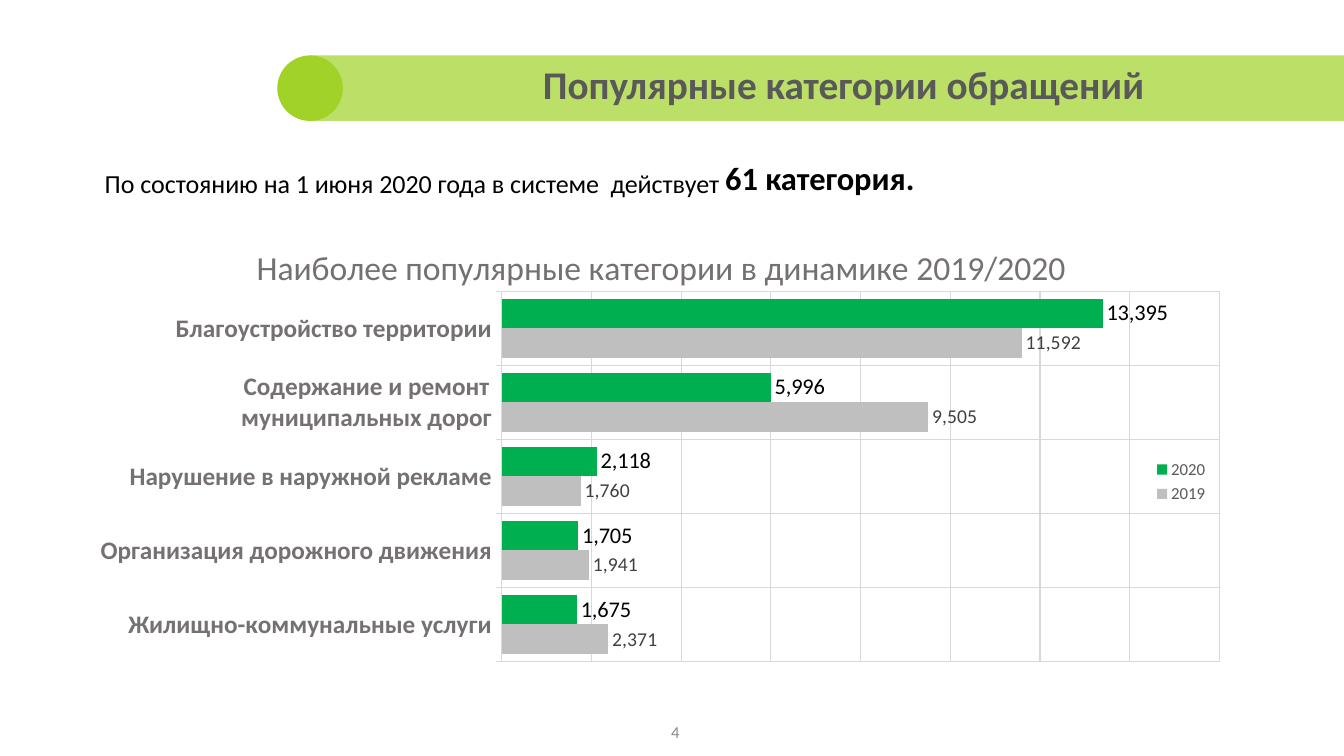
from dataclasses import dataclass

from lxml import etree
from pptx import Presentation
from pptx.chart.data import CategoryChartData
from pptx.dml.color import RGBColor
from pptx.enum.chart import XL_CHART_TYPE as ChartType
from pptx.enum.chart import XL_LABEL_POSITION as LabelPosition
from pptx.enum.chart import XL_LEGEND_POSITION as LegendPosition
from pptx.enum.chart import XL_TICK_MARK as TickMark
from pptx.enum.shapes import MSO_SHAPE as ShapeType
from pptx.enum.text import MSO_ANCHOR as Anchor
from pptx.enum.text import MSO_AUTO_SIZE as AutoSize
from pptx.enum.text import PP_ALIGN as Align
from pptx.oxml.ns import qn
from pptx.util import Inches, Pt

FONT = "Calibri"
COLORS = {
    "lime": "A0D228", "green": "00B050", "silver": "BFBFBF", "grid": "D9D9D9",
    "black": "000000", "title": "595959", "caption": "767171",
    "label": "404040", "number": "8C8C8C",
}


@dataclass
class BannerPart:
    kind: ShapeType
    left: float
    width: float
    opacity: int


@dataclass
class YearSeries:
    year: str
    values: tuple[int, ...]
    color: str
    label_size: int
    label_color: str


BANNER = (
    BannerPart(ShapeType.RECTANGLE, 3.07, 10.27, 70),
    BannerPart(ShapeType.OVAL, 2.75, 0.65, 100),
)
CATEGORIES = (
    "Жилищно-коммунальные услуги",
    "Организация дорожного движения",
    "Нарушение в наружной рекламе",
    "Содержание и ремонт муниципальных дорог",
    "Благоустройство территории",
)
YEARS = (
    YearSeries("2019", (2371, 1941, 1760, 9505, 11592), "silver", 14, "label"),
    YearSeries("2020", (1675, 1705, 2118, 5996, 13395), "green", 16, "black"),
)


def rgb(name: str) -> RGBColor:
    return RGBColor.from_string(COLORS[name])


def style_font(font, size: int, color: str, bold: bool = False) -> None:
    font.name = FONT
    font.size = Pt(size)
    font.bold = bold
    font.color.rgb = rgb(color)


def style_grid(line_format) -> None:
    line_format.color.rgb = rgb("grid")
    line_format.width = Pt(0.75)


def place(shape, left: float, top: float, width: float, height: float) -> None:
    shape.left, shape.top = Inches(left), Inches(top)
    shape.width, shape.height = Inches(width), Inches(height)


def add_banner_part(slide, part: BannerPart) -> None:
    shape = slide.shapes.add_shape(part.kind, 0, 0, 0, 0)
    place(shape, part.left, 0.55, part.width, 0.65)
    shape.shadow.inherit = False
    shape.fill.solid()
    shape.fill.fore_color.rgb = rgb("lime")
    shape.line.fill.background()
    if part.opacity < 100:
        color = shape.fill._xPr.find(".//" + qn("a:srgbClr"))
        etree.SubElement(color, qn("a:alpha"), val=str(part.opacity * 1000))


def set_layout(element, index: int, inner: bool = False, **fractions: float) -> None:
    """Give a chart part a manual position in fractions of the chart."""
    for old in element.findall(qn("c:layout")):
        element.remove(old)
    layout = etree.Element(qn("c:layout"))
    manual = etree.SubElement(layout, qn("c:manualLayout"))
    if inner:
        etree.SubElement(manual, qn("c:layoutTarget"), val="inner")
    for axis in "xy":
        etree.SubElement(manual, qn(f"c:{axis}Mode"), val="edge")
    for key, value in fractions.items():
        etree.SubElement(manual, qn(f"c:{key}"), val=str(value))
    element.insert(index, layout)


def style_series(series, year: YearSeries) -> None:
    series.format.fill.solid()
    series.format.fill.fore_color.rgb = rgb(year.color)
    labels = series.data_labels
    labels.show_value = True
    labels.number_format = "#,##0"
    labels.number_format_is_linked = False
    labels.position = LabelPosition.OUTSIDE_END
    style_font(labels.font, year.label_size, year.label_color)


def add_category_chart(slide) -> None:
    data = CategoryChartData()
    data.categories = CATEGORIES
    for year in YEARS:
        data.add_series(year.year, year.values)
    frame = slide.shapes.add_chart(
        ChartType.BAR_CLUSTERED, Inches(0.92), Inches(2.23), Inches(11.18), Inches(4.81), data)
    chart = frame.chart
    style_font(chart.font, 10, "black")

    # Chart title
    chart.has_title = True
    paragraph = chart.chart_title.text_frame.paragraphs[0]
    paragraph.text = "Наиболее популярные категории в динамике 2019/2020"
    style_font(paragraph.font, 24, "caption")
    set_layout(chart.chart_title._element, 1, x=0.14, y=0.03)

    # Bars
    plot = chart.plots[0]
    plot.gap_width = 51
    plot.overlap = 0
    plot.vary_by_categories = False
    for series, year in zip(plot.series, YEARS):
        style_series(series, year)
    set_layout(chart._chartSpace.chart.plotArea, 0, True, x=0.363, y=0.137, w=0.637, h=0.764)

    # Axes
    category_axis, value_axis = chart.category_axis, chart.value_axis
    category_axis.major_tick_mark = TickMark.OUTSIDE
    style_font(category_axis.tick_labels.font, 18, "caption", True)
    style_grid(category_axis.format.line)
    value_axis.minimum_scale = 0
    value_axis.maximum_scale = 16000
    value_axis.major_unit = 2000
    value_axis.visible = False
    for axis in (category_axis, value_axis):
        axis.has_major_gridlines = True
        style_grid(axis.major_gridlines.format.line)

    # Legend over the empty part of the plot
    chart.has_legend = True
    chart.legend.position = LegendPosition.RIGHT
    chart.legend.include_in_layout = True
    style_font(chart.legend.font, 12, "title")
    set_layout(chart.legend._element, 1, x=0.936, y=0.475, w=0.06, h=0.11)


def add_summary(slide) -> None:
    box = slide.shapes.add_textbox(0, 0, 0, 0)
    place(box, 0.92, 1.45, 12.05, 0.77)
    box.text_frame.word_wrap = True
    paragraph = box.text_frame.paragraphs[0]
    paragraph._p.get_or_add_pPr().set("marL", str(Inches(0.02)))
    for text, size, bold in (
        ("По состоянию на 1 июня 2020 года в системе  действует ", 32, False),
        ("61 категория.", 40, True),
    ):
        run = paragraph.add_run()
        run.text = text
        style_font(run.font, size, "black", bold)
        run._r.get_or_add_rPr().set("baseline", "30000")


def add_page_number(slide) -> None:
    box = slide.shapes.add_textbox(0, 0, 0, 0)
    place(box, 6.47, 7.11, 0.29, 0.29)
    box.text_frame.vertical_anchor = Anchor.MIDDLE
    box.text_frame.margin_left = box.text_frame.margin_right = Inches(0.02)
    paragraph = box.text_frame.paragraphs[0]
    paragraph.text = "4"
    paragraph.alignment = Align.RIGHT
    style_font(paragraph.font, 12, "number")


def fill_title(slide) -> None:
    title = slide.shapes.title
    place(title, 3.4, 0.68, 9.93, 0.45)
    title.text_frame.auto_size = AutoSize.NONE
    title.text_frame.vertical_anchor = Anchor.TOP
    paragraph = title.text_frame.paragraphs[0]
    paragraph.text = "Популярные категории обращений"
    paragraph.alignment = Align.CENTER
    paragraph.line_spacing = 0.7
    style_font(paragraph.font, 28, "title", True)
    # Bring the title in front of the banner
    slide.shapes._spTree.append(title._element)


def main() -> None:
    presentation = Presentation()
    presentation.slide_width, presentation.slide_height = Inches(13.33), Inches(7.5)
    slide = presentation.slides.add_slide(presentation.slide_layouts[5])
    add_page_number(slide)
    for part in BANNER:
        add_banner_part(slide, part)
    fill_title(slide)
    add_category_chart(slide)
    add_summary(slide)
    presentation.save("out.pptx")


if __name__ == "__main__":
    main()
